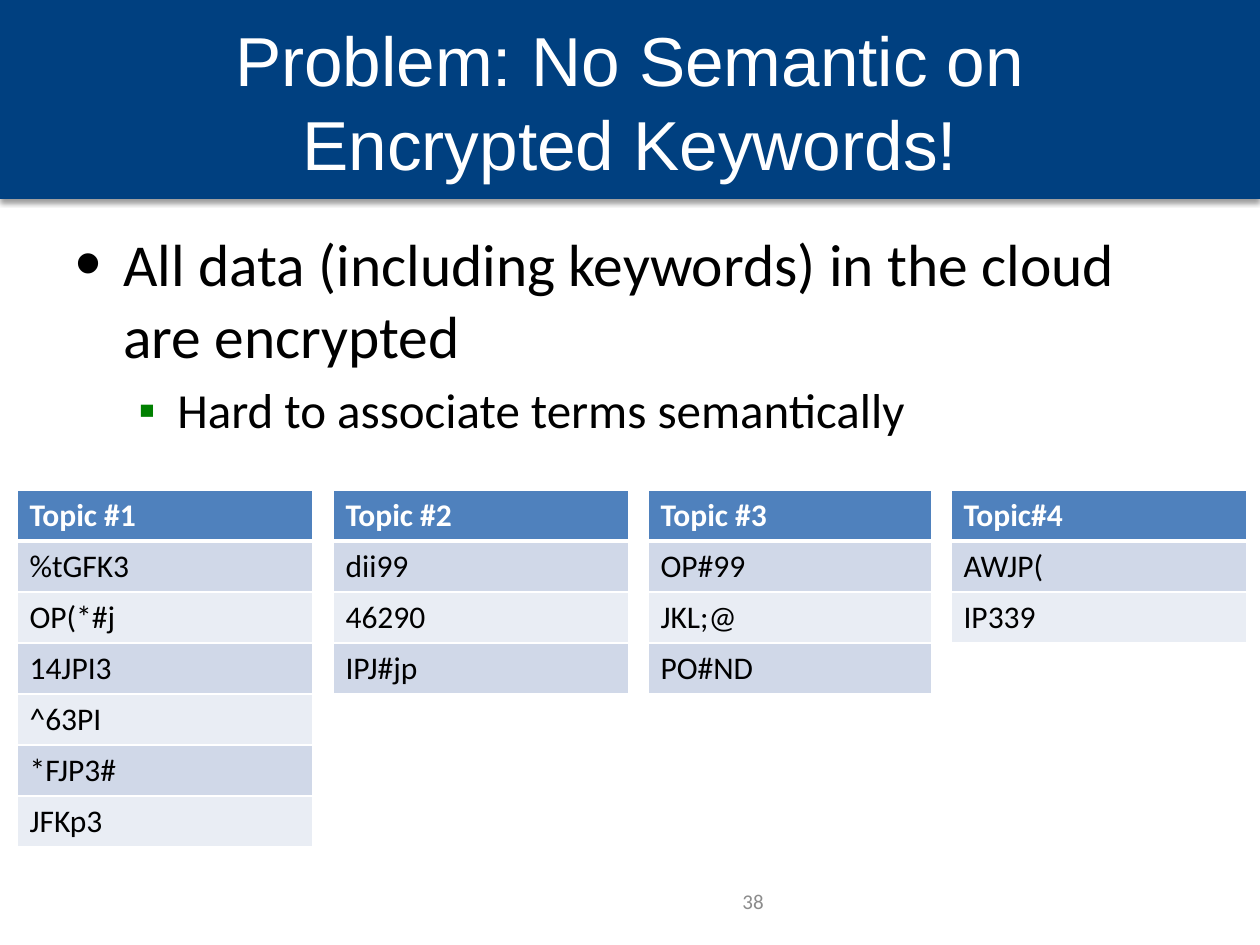
from lxml import etree
from pptx import Presentation
from pptx.dml.color import RGBColor
from pptx.enum.shapes import MSO_SHAPE
from pptx.enum.text import MSO_ANCHOR, PP_ALIGN
from pptx.oxml.ns import qn
from pptx.util import Emu, Pt

TOP, MIDDLE = MSO_ANCHOR.TOP, MSO_ANCHOR.MIDDLE
LEFT, CENTER, RIGHT = PP_ALIGN.LEFT, PP_ALIGN.CENTER, PP_ALIGN.RIGHT
RECTANGLE = MSO_SHAPE.RECTANGLE

TITLE = "Problem: No Semantic on Encrypted Keywords!"
BULLETS = [
    ("All data (including keywords) in the cloud are encrypted",
     dict(size=34, bullet="•", bullet_size=125, margin=48, hanging=48)),
    ("Hard to associate terms semantically",
     dict(size=28, bullet="▪", bullet_color="008000", margin=102, hanging=39,
          level=1, before=5.6)),
]
PAGE_NUMBER = "38"
TOPICS = [
    (17, 296, ["Topic #1", "%tGFK3", "OP(*#j", "14JPI3", "^63PI", "*FJP3#", "JFKp3"]),
    (333, 296, ["Topic #2", "dii99", "46290", "IPJ#jp"]),
    (648, 284, ["Topic #3", "OP#99", "JKL;@", "PO#ND"]),
    (951, 296, ["Topic#4", "AWJP(", "IP339"]),
]
TABLE_TOP, ROW_HEIGHT = 490, 51
HEADER_FILL, BAND_FILLS = "4F81BD", ("D0D8E8", "E9EDF4")
WHITE, BLACK, NAVY, GRAY = "FFFFFF", "000000", "004080", "8C8C8C"
EMU_PER_PX = 914400 / 126


def px(length):
    return Emu(round(length * EMU_PER_PX))


def color(value):
    return RGBColor.from_string(value)


def add_xml(parent, tag, **attributes):
    return etree.SubElement(parent, qn(tag), {name: str(value) for name, value in attributes.items()})


def write(paragraph, text, size=18, font="Calibri", fill=BLACK, bold=False, align=LEFT,
          level=0, before=0, line=None, bullet=None, bullet_size=None,
          bullet_color=None, margin=0, hanging=0):
    paragraph.level = level
    paragraph.alignment = align
    paragraph.space_before = Pt(before)
    if line:
        paragraph.line_spacing = Pt(line)
    if bullet:
        properties = paragraph._p.get_or_add_pPr()
        properties.set("marL", str(px(margin)))
        properties.set("indent", str(-px(hanging)))
        if bullet_color:
            add_xml(add_xml(properties, "a:buClr"), "a:srgbClr", val=bullet_color)
        if bullet_size:
            add_xml(properties, "a:buSzPct", val=bullet_size * 1000)
        add_xml(properties, "a:buFont", typeface="Arial")
        add_xml(properties, "a:buChar", char=bullet)
    run = paragraph.add_run()
    run.text = text
    run.font.size = Pt(size)
    run.font.name = font
    run.font.bold = bold
    run.font.color.rgb = color(fill)


def add_text(slide, box, paragraphs, anchor=TOP):
    frame = slide.shapes.add_textbox(*map(px, box)).text_frame
    frame.word_wrap = True
    frame.vertical_anchor = anchor
    for index, (text, style) in enumerate(paragraphs):
        paragraph = frame.add_paragraph() if index else frame.paragraphs[0]
        write(paragraph, text, **style)


def add_banner(slide):
    banner = slide.shapes.add_shape(RECTANGLE, 0, 0, px(1260), px(199))
    banner.shadow.inherit = False
    banner.fill.solid()
    banner.fill.fore_color.rgb = color(NAVY)
    banner.line.fill.background()
    effects = banner._element.spPr.find(qn("a:effectLst"))
    shadow = add_xml(effects, "a:outerShdw", blurRad=Pt(3.1), dist=Pt(1.6),
                     dir=5400000, rotWithShape=0)
    add_xml(add_xml(shadow, "a:srgbClr", val=BLACK), "a:alpha", val=38000)


def set_borders(cell, bottom):
    properties = cell._tc.get_or_add_tcPr()
    widths = {"a:lnL": 1, "a:lnR": 1, "a:lnT": 1, "a:lnB": bottom}
    for position, (tag, width) in enumerate(widths.items()):
        border = add_xml(properties, tag, w=Pt(width))
        add_xml(add_xml(border, "a:solidFill"), "a:srgbClr", val=WHITE)
        properties.insert(position, border)


def add_topic(slide, left, width, words):
    table = slide.shapes.add_table(len(words), 1, px(left), px(TABLE_TOP), px(width),
                                   px(ROW_HEIGHT * len(words))).table
    for index, word in enumerate(words):
        header = index == 0
        cell = table.cell(index, 0)
        cell.fill.solid()
        cell.fill.fore_color.rgb = color(HEADER_FILL if header else BAND_FILLS[(index - 1) % 2])
        set_borders(cell, bottom=3 if header else 1)
        write(cell.text_frame.paragraphs[0], word, bold=header, fill=WHITE if header else BLACK)


def main():
    presentation = Presentation()
    presentation.slide_width, presentation.slide_height = px(1260), px(945)
    slide = presentation.slides.add_slide(presentation.slide_layouts[6])
    add_banner(slide)
    title_style = dict(size=39.6, font="Arial", fill=WHITE, align=CENTER, line=48)
    add_text(slide, (63, 21, 1134, 158), [(TITLE, title_style)], anchor=MIDDLE)
    add_text(slide, (63, 221, 1134, 624), BULLETS)
    number_style = dict(size=12, fill=GRAY, align=RIGHT)
    add_text(slide, (483, 876, 293, 50), [(PAGE_NUMBER, number_style)], anchor=MIDDLE)
    for topic in TOPICS:
        add_topic(slide, *topic)
    presentation.save("out.pptx")


if __name__ == "__main__":
    main()
